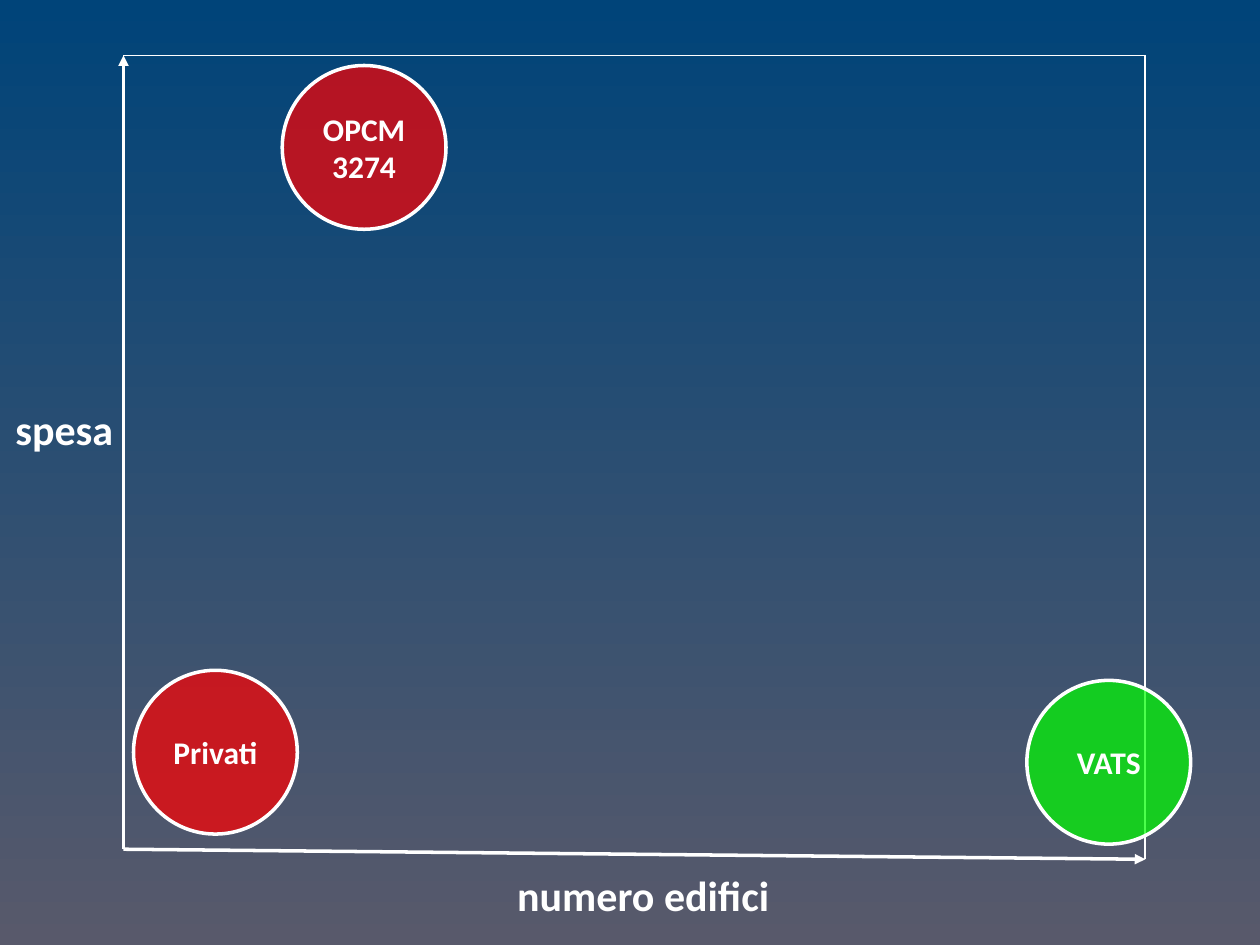
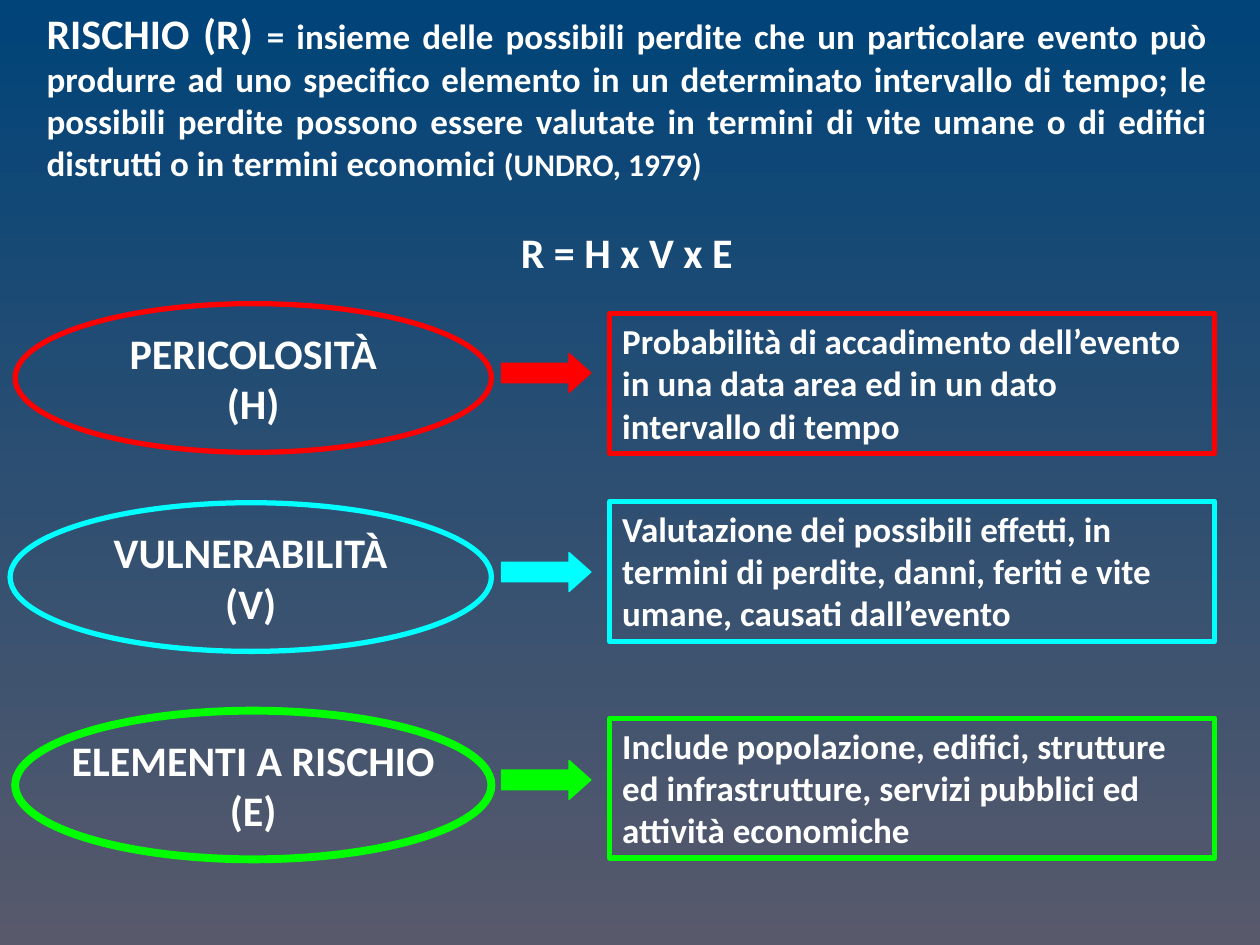
from dataclasses import dataclass

from lxml.etree import SubElement
from pptx import Presentation
from pptx.dml.color import RGBColor
from pptx.enum.shapes import MSO_CONNECTOR, MSO_SHAPE
from pptx.enum.text import MSO_ANCHOR as Anchor, MSO_AUTO_SIZE as AutoSize, PP_ALIGN as Align
from pptx.oxml.ns import qn
from pptx.util import Emu, Inches, Pt

COLORS = {
    "sky": "004479",
    "ground": "58596B",
    "white": "FFFFFF",
    "red": "FF0000",
    "green": "00FF00",
    "cyan": "00FFFF",
}
FONT = "Calibri"
COLUMNS, ROWS = 100, 75
SLIDE_W, SLIDE_H = Inches(10), Inches(7.5)
LEFT, RIGHT, TOP, BOTTOM, BOTTOM_END = 9.8, 90.9, 4.4, 67.4, 68.2


@dataclass(frozen=True)
class Box:
    """A place on the grid, in columns and rows."""
    col: float
    row: float
    cols: float
    rows: float

    def emu(self) -> tuple:
        """Give left, top, width and height."""
        return across(self.col), down(self.row), across(self.cols), down(self.rows)


@dataclass(frozen=True)
class Run:
    """A piece of text of one size."""
    text: str
    size: float


@dataclass(frozen=True)
class Para:
    """A paragraph made of runs."""
    runs: tuple
    align: Align = Align.CENTER
    before: float = 0


@dataclass(frozen=True)
class Axis:
    """A straight line of the chart frame."""
    start: tuple
    end: tuple
    width: float
    arrow: bool = False


@dataclass(frozen=True)
class Method:
    """An assessment method placed by spending and number of buildings."""
    name: str
    col: float
    row: float
    color: str


@dataclass(frozen=True)
class Factor:
    """A risk factor with its meaning."""
    name: str
    symbol: str
    meaning: str
    color: str
    oval: Box
    weight: float
    meaning_row: float


AXES = (
    Axis((LEFT, BOTTOM), (LEFT, TOP), 2, True),
    Axis((LEFT, BOTTOM), (RIGHT, BOTTOM_END), 2, True),
    Axis((LEFT, TOP), (RIGHT, TOP), 1),
    Axis((RIGHT, TOP), (RIGHT, BOTTOM_END), 1),
)
AXIS_LABELS = {
    "numero edifici": Box(34.3, 69, 33.5, 4),
    "spesa": Box(0, 32, 10.2, 4),
}
METHODS = (
    Method("OPCM 3274", 22.4, 5.2, "red"),
    Method("Privati", 10.6, 53.2, "red"),
    Method("VATS", 81.5, 54, "green"),
)
DEFINITION = (
    Para((
        Run("RISCHIO (R) ", 24),
        Run("= insieme delle possibili perdite che un particolare evento può produrre "
            "ad uno specifico elemento in un determinato intervallo di tempo; le possibili "
            "perdite possono essere valutate in termini di vite umane o di edifici distrutti "
            "o in termini economici ", 20),
        Run("(UNDRO, 1979)", 18),
    ), Align.JUSTIFY),
    Para((Run("R = H x V x E", 24),), before=24.4),
)
FACTORS = (
    Factor("PERICOLOSITÀ", "(H)",
           "Probabilità di accadimento dell’evento in una data area ed in un dato "
           "intervallo di tempo",
           "red", Box(1.2, 24.1, 37.8, 11.8), 3, 24.9),
    Factor("VULNERABILITÀ", "(V)",
           "Valutazione dei possibili effetti, in termini di perdite, danni, feriti e vite "
           "umane, causati dall’evento",
           "cyan", Box(0.8, 39.9, 38.2, 11.8), 3, 39.8),
    Factor("ELEMENTI A RISCHIO", "(E)",
           "Include popolazione, edifici, strutture ed infrastrutture, servizi pubblici ed "
           "attività economiche",
           "green", Box(1.2, 56.4, 37.8, 11.8), 4.5, 57),
)


def across(cols: float) -> Emu:
    """Turn columns into a length."""
    return Emu(round(SLIDE_W * cols / COLUMNS))


def down(rows: float) -> Emu:
    """Turn rows into a length."""
    return Emu(round(SLIDE_H * rows / ROWS))


def rgb(name: str) -> RGBColor:
    """Look up a colour by name."""
    return RGBColor.from_string(COLORS[name])


def write(tf, paras: tuple, wrap: bool = True, anchor: Anchor = Anchor.TOP) -> None:
    """Fill a text frame with bold white paragraphs."""
    tf.auto_size = AutoSize.NONE
    tf.word_wrap = wrap
    tf.vertical_anchor = anchor
    for i, para in enumerate(paras):
        p = tf.add_paragraph() if i else tf.paragraphs[0]
        p.alignment = para.align
        if para.before:
            p.space_before = Pt(para.before)
        for run in para.runs:
            r = p.add_run()
            r.text = run.text
            r.font.name, r.font.size, r.font.bold = FONT, Pt(run.size), True
            r.font.color.rgb = rgb("white")


def add_shape(s, kind: MSO_SHAPE, box: Box, line: str, width: float, fill: str = ""):
    """Draw a preset shape, hollow unless a fill is named."""
    sp = s.shapes.add_shape(kind, *box.emu())
    sp.shadow.inherit = False
    sp.line.color.rgb = rgb(line)
    sp.line.width = Pt(width)
    if fill:
        sp.fill.solid()
        sp.fill.fore_color.rgb = rgb(fill)
    else:
        sp.fill.background()
    return sp


def add_axis(s, axis: Axis) -> None:
    """Draw a frame line, with an arrowhead on the axes."""
    (x1, y1), (x2, y2) = axis.start, axis.end
    sp = s.shapes.add_connector(MSO_CONNECTOR.STRAIGHT, across(x1), down(y1), across(x2), down(y2))
    sp.line.color.rgb = rgb("white")
    sp.line.width = Pt(axis.width)
    props = sp._element.spPr
    if axis.arrow:
        SubElement(props.find(qn("a:ln")), qn("a:tailEnd"), type="triangle")
    SubElement(props, qn("a:effectLst"))


def add_axis_label(s, text: str, box: Box) -> None:
    """Write the name of an axis."""
    tf = s.shapes.add_textbox(*box.emu()).text_frame
    tf.margin_left = tf.margin_right = tf.margin_top = tf.margin_bottom = 0
    write(tf, (Para((Run(text, 24),)),))


def add_method(s, method: Method) -> None:
    """Draw a method as a translucent circle."""
    box = Box(method.col, method.row, 13, 13)
    sp = add_shape(s, MSO_SHAPE.OVAL, box, "white", 2, method.color)
    color = sp._element.spPr.find(qn("a:solidFill")).find(qn("a:srgbClr"))
    SubElement(color, qn("a:alpha"), val="70000")
    write(sp.text_frame, (Para((Run(method.name, 18),)),), anchor=Anchor.MIDDLE)


def add_factor(s, factor: Factor) -> None:
    """Draw a factor, its arrow and its meaning."""
    sp = add_shape(s, MSO_SHAPE.OVAL, factor.oval, factor.color, factor.weight)
    names = tuple(Para((Run(text, 24),)) for text in (factor.name, factor.symbol))
    write(sp.text_frame, names, wrap=False, anchor=Anchor.MIDDLE)
    arrow = Box(39.8, factor.oval.row + 3.95, 7.1, 3.1)
    sp = add_shape(s, MSO_SHAPE.RIGHT_ARROW, arrow, factor.color, 0.75, factor.color)
    sp.adjustments[1] = 0.56
    meaning = Box(48.4, factor.meaning_row, 48, 11.1)
    sp = add_shape(s, MSO_SHAPE.RECTANGLE, meaning, factor.color, 3)
    write(sp.text_frame, (Para((Run(factor.meaning, 20),), Align.LEFT),))


def set_background(prs) -> None:
    """Give the master a vertical gradient."""
    fill = prs.slide_master.background.fill
    fill.gradient()
    fill.gradient_angle = 270
    for stop, name, position in zip(fill.gradient_stops, ("sky", "ground"), (0, 1)):
        stop.color.rgb = rgb(name)
        stop.position = position


def build_spending_slide(prs) -> None:
    """Compare the methods by spending and buildings."""
    s = prs.slides.add_slide(prs.slide_layouts.get_by_name("Blank"))
    for axis in AXES:
        add_axis(s, axis)
    for text, box in AXIS_LABELS.items():
        add_axis_label(s, text, box)
    for method in METHODS:
        add_method(s, method)


def build_risk_slide(prs) -> None:
    """Define risk and its three factors."""
    s = prs.slides.add_slide(prs.slide_layouts.get_by_name("Title Only"))
    title = s.shapes.title
    title.left, title.top, title.width, title.height = Box(2.7, 0.1, 94.1, 23.2).emu()
    write(title.text_frame, DEFINITION)
    for factor in FACTORS:
        add_factor(s, factor)


def main() -> None:
    """Build and save the slides."""
    prs = Presentation()
    prs.slide_width, prs.slide_height = SLIDE_W, SLIDE_H
    set_background(prs)
    build_spending_slide(prs)
    build_risk_slide(prs)
    prs.save("out.pptx")


if __name__ == "__main__":
    main()
